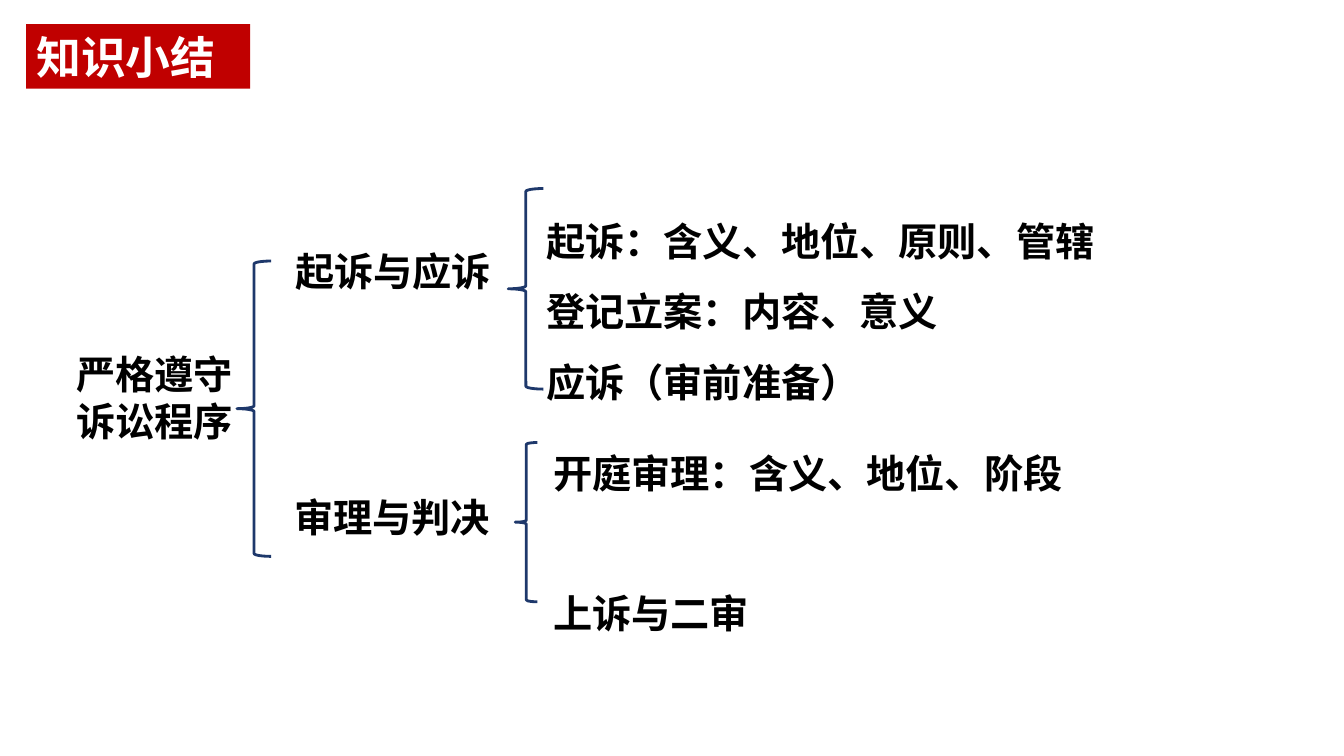
from lxml.etree import SubElement
from pptx import Presentation
from pptx.dml.color import RGBColor
from pptx.enum.shapes import MSO_SHAPE as Shape
from pptx.enum.text import MSO_ANCHOR as Anchor, MSO_AUTO_SIZE as AutoSize, PP_ALIGN as Align
from pptx.oxml.ns import qn
from pptx.util import Inches, Pt

FONT = "Noto Sans CJK SC"


def rgb(code):
    return RGBColor.from_string(code)


def write(shape, *lines, size=28, color="000000", spacing=1.0, gap=0, anchor=Anchor.TOP):
    """Fill a shape with bold paragraphs; gap is the space between them in points."""
    frame = shape.text_frame
    frame.word_wrap = True
    frame.auto_size = AutoSize.NONE
    frame.vertical_anchor = anchor
    for i, line in enumerate(lines):
        para = frame.paragraphs[0] if i == 0 else frame.add_paragraph()
        para.alignment = Align.LEFT
        para.line_spacing = spacing
        para.space_before = Pt(gap if i else 0)
        run = para.add_run()
        run.text = line
        run.font.size, run.font.bold, run.font.name = Pt(size), True, FONT
        run.font.color.rgb = rgb(color)
        SubElement(run.font._element, qn("a:ea"), typeface=FONT)


deck = Presentation()
deck.slide_width, deck.slide_height = Inches(13.33), Inches(7.5)
slide = deck.slides.add_slide(deck.slide_layouts[5])

# Red heading
heading = slide.shapes.title
heading.left, heading.top = Inches(0.26), Inches(0.24)
heading.width, heading.height = Inches(2.22), Inches(0.64)
heading.fill.solid()
heading.fill.fore_color.rgb = rgb("C00000")
write(heading, "知识小结", size=32, color="FFFFFF", anchor=Anchor.MIDDLE)

# Topic, its two branches and their details
topic = ((0.66, 3.43, 1.87, 1.04), ["严格遵守诉讼程序"], {})
filing = ((2.83, 2.4, 3.34, 0.57), ["起诉与应诉"], {})
trial = ((2.82, 4.84, 2.9, 0.57), ["审理与判决"], {})
filing_details = (
    (5.32, 1.87, 6, 2.22),
    ["起诉：含义、地位、原则、管辖", "登记立案：内容、意义", "应诉（审前准备）"],
    {"spacing": 1.5},
)
trial_details = (
    (5.39, 4.17, 7.48, 2.22),
    ["开庭审理：含义、地位、阶段", "上诉与二审"],
    {"spacing": 1.5, "gap": 50},
)
for place, lines, style in (topic, filing, trial, filing_details, trial_details):
    write(slide.shapes.add_textbox(*map(Inches, place)), *lines, **style)

# Braces that open each level
for place in ((2.35, 2.59, 0.34, 2.93), (5.04, 1.87, 0.35, 1.99), (5.11, 4.39, 0.22, 1.58)):
    brace = slide.shapes.add_shape(Shape.LEFT_BRACE, *map(Inches, place))
    brace.shadow.inherit = False
    brace.fill.background()
    brace.line.color.rgb = rgb("1E386B")
    brace.line.width = Pt(2)

deck.save("out.pptx")
